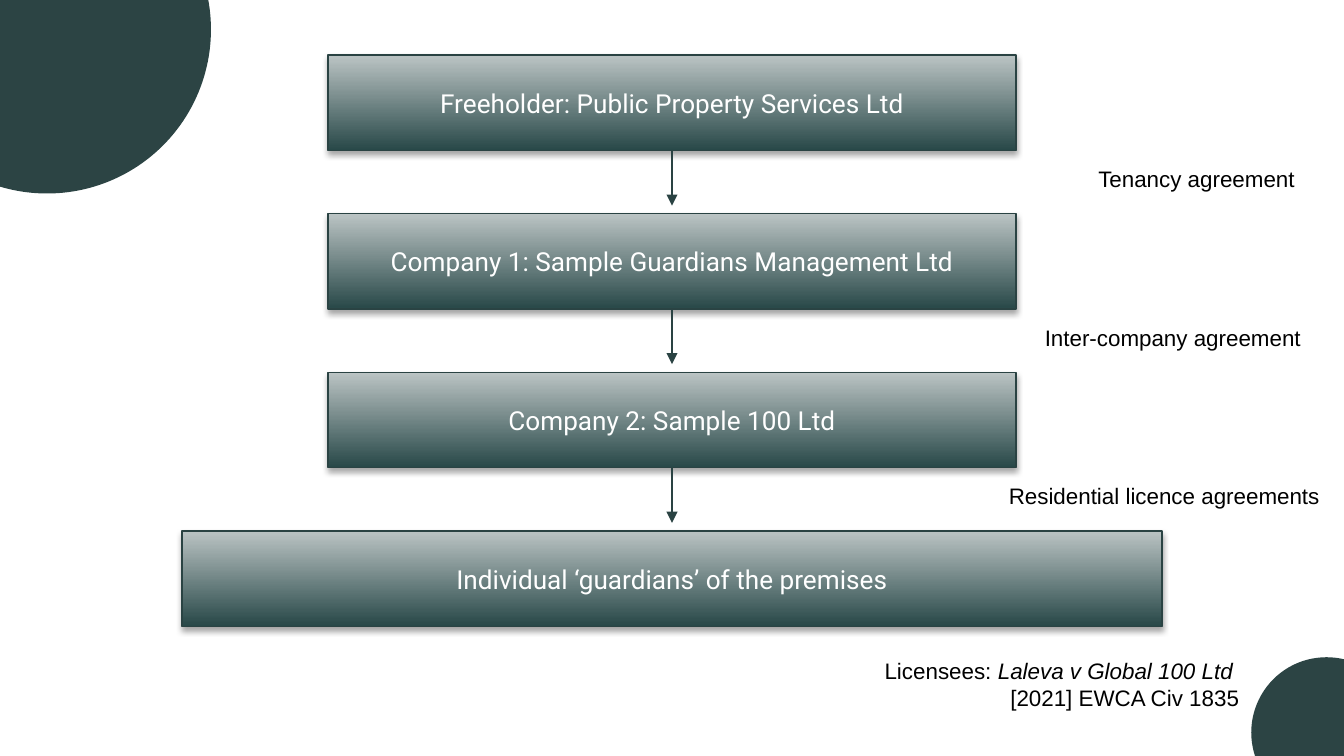
import pptx
import pptx.dml.color
import pptx.enum.dml
import pptx.enum.shapes
import pptx.enum.text
import pptx.oxml
import pptx.oxml.ns
import pptx.util
from pptx.util import Inches

COLORS = {
    "circle": "2C4444",
    "box_bottom": "284848",
    "box_top": "BBC4C4",
    "line": "2A4343",
    "box_text": "FFFFFF",
    "label": "000000",
    "shadow": "000000",
}
SHAPE = pptx.enum.shapes.MSO_SHAPE
ALIGN = pptx.enum.text.PP_ALIGN
SLIDE_WIDTH = 10
BOX_HEIGHT = 0.71
BOX_STEP = 1.18


def rgb(name):
    return pptx.dml.color.RGBColor.from_string(COLORS[name])


def add_xml(parent, xml):
    namespaces = pptx.oxml.ns.nsdecls("a")
    element = pptx.oxml.parse_xml(xml.replace(">", f" {namespaces}>", 1))
    parent.append(element)


def add_run(paragraph, text, font, size, color, italic=False):
    run = paragraph.add_run()
    run.text = text
    run.font.name = font
    run.font.size = pptx.util.Pt(size)
    run.font.italic = italic
    run.font.color.rgb = rgb(color)


def add_circle(slide, left, top, diameter):
    circle = slide.shapes.add_shape(
        SHAPE.OVAL, Inches(left), Inches(top), Inches(diameter), Inches(diameter))
    circle.shadow.inherit = False
    circle.fill.solid()
    circle.fill.fore_color.rgb = rgb("circle")
    circle.line.fill.background()


def add_box(slide, left, top, width, text):
    box = slide.shapes.add_shape(
        SHAPE.FLOWCHART_PROCESS, Inches(left), Inches(top), Inches(width), Inches(BOX_HEIGHT))
    box.fill.gradient()
    box.fill.gradient_angle = 90
    for stop, color in zip(box.fill.gradient_stops, ("box_bottom", "box_top")):
        stop.color.rgb = rgb(color)
    box.line.color.rgb = rgb("line")
    box.line.width = pptx.util.Pt(0.75)
    # Soft shadow straight below the box
    add_xml(box.element.spPr,
            '<a:effectLst><a:outerShdw blurRad="40000" dist="23000" dir="5400000" rotWithShape="0">'
            f'<a:srgbClr val="{COLORS["shadow"]}"><a:alpha val="35000"/></a:srgbClr>'
            '</a:outerShdw></a:effectLst>')
    frame = box.text_frame
    frame.word_wrap = True
    frame.vertical_anchor = pptx.enum.text.MSO_ANCHOR.MIDDLE
    paragraph = frame.paragraphs[0]
    paragraph.alignment = ALIGN.CENTER
    add_run(paragraph, text, "Roboto", 14, "box_text")


def add_arrow(slide, x, top, length):
    arrow = slide.shapes.add_connector(
        pptx.enum.shapes.MSO_CONNECTOR.STRAIGHT,
        Inches(x), Inches(top), Inches(x), Inches(top + length))
    arrow.line.color.rgb = rgb("line")
    arrow.line.width = pptx.util.Pt(0.75)
    add_xml(arrow.line._get_or_add_ln(), '<a:tailEnd type="triangle"></a:tailEnd>')
    add_xml(arrow._element.spPr, "<a:effectLst></a:effectLst>")


def add_label(slide, left, top, width, height, lines):
    """Right-aligned text; each line is a list of (text, italic) runs."""
    label = slide.shapes.add_textbox(Inches(left), Inches(top), Inches(width), Inches(height))
    frame = label.text_frame
    frame.word_wrap = True
    frame.auto_size = pptx.enum.text.MSO_AUTO_SIZE.SHAPE_TO_FIT_TEXT
    for index, runs in enumerate(lines):
        paragraph = frame.add_paragraph() if index else frame.paragraphs[0]
        paragraph.alignment = ALIGN.RIGHT
        for text, italic in runs:
            add_run(paragraph, text, "Arial", 12, "label", italic)


def add_chain(slide, center, top):
    """Boxes from owner to occupier, with an arrow and an agreement between each pair."""
    levels = [
        ("Freeholder: Public Property Services Ltd", 5.12),
        ("Company 1: Sample Guardians Management Ltd", 5.12),
        ("Company 2: Sample 100 Ltd", 5.12),
        ("Individual ‘guardians’ of the premises", 7.29),
    ]
    agreements = [
        ("Tenancy agreement ", 1.8),
        ("Inter-company agreement", 1.8),
        ("Residential licence agreements", 1.94),
    ]
    for index, (text, width) in enumerate(levels):
        add_box(slide, center - width / 2, top + index * BOX_STEP, width, text)
    for index, (text, offset) in enumerate(agreements):
        bottom = top + index * BOX_STEP + BOX_HEIGHT
        add_arrow(slide, center, bottom, 0.41)
        add_label(slide, center + offset, bottom + 0.06, 2.98, 0.3, [[(text, False)]])


def main():
    presentation = pptx.Presentation()
    presentation.slide_width = Inches(SLIDE_WIDTH)
    presentation.slide_height = Inches(SLIDE_WIDTH * 9 / 16)
    slide = presentation.slides.add_slide(presentation.slide_layouts[6])

    # Corner circles
    add_circle(slide, 9.31, 4.89, 1.12)
    add_circle(slide, -0.87, -1, 2.44)

    # Chain of agreements
    add_chain(slide, SLIDE_WIDTH / 2, 0.41)

    # Case citation
    add_label(slide, 5, 4.84, 4.32, 0.5, [
        [("Licensees: ", False), ("Laleva v Global 100 Ltd ", True)],
        [("[2021] EWCA Civ 1835", False)],
    ])

    presentation.save("out.pptx")


if __name__ == "__main__":
    main()
